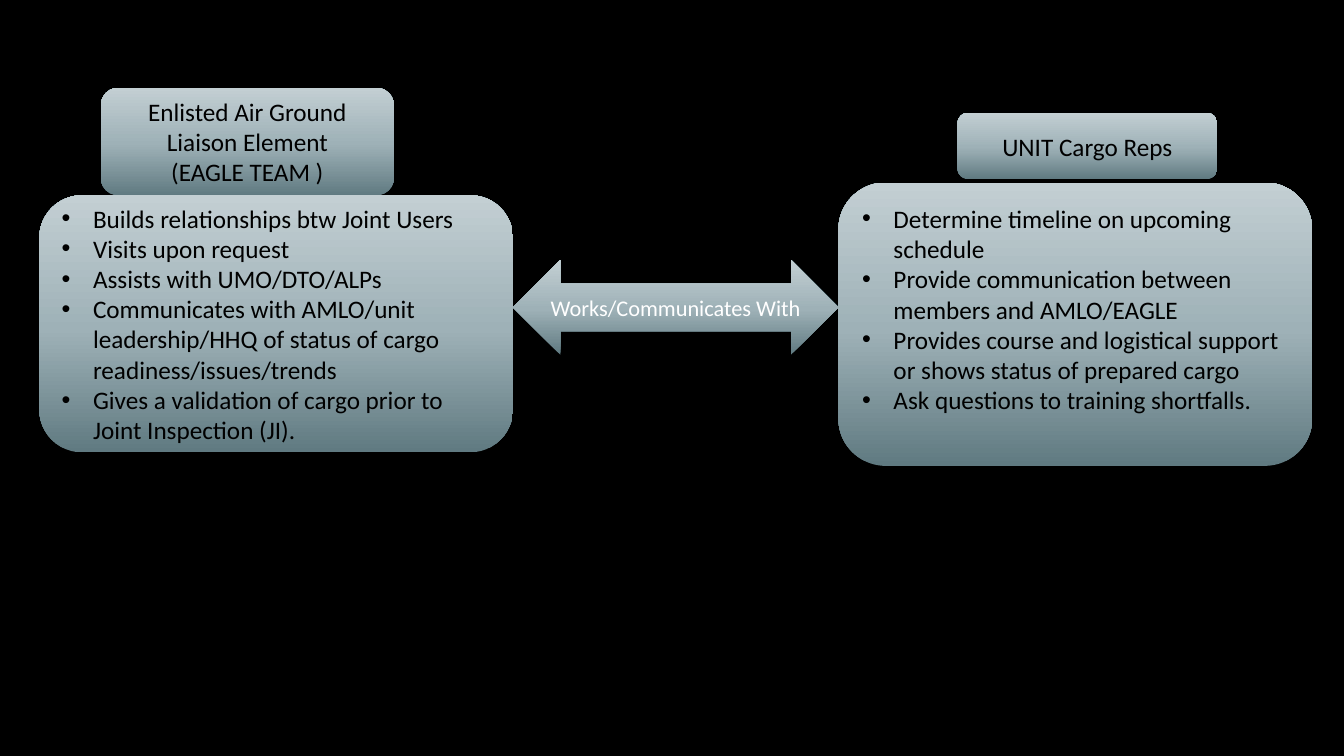
from copy import deepcopy

from lxml.etree import SubElement
from pptx import Presentation
from pptx.dml.color import RGBColor
from pptx.enum.shapes import MSO_SHAPE
from pptx.enum.text import MSO_ANCHOR, PP_ALIGN
from pptx.oxml.ns import qn
from pptx.util import Cm, Pt

GRADIENT = [(0, "607A81"), (0.48, "9EB1B7"), (1, "C3CFD3")]


def colour(value):
    return RGBColor.from_string(value)


def write(para, text, size=18, ink="000000", font="Calibri",
          align=PP_ALIGN.CENTER, bullet=False):
    if bullet:
        properties = para._p.get_or_add_pPr()
        properties.set("marL", str(Cm(0.79)))
        properties.set("indent", str(-Cm(0.79)))
        SubElement(properties, qn("a:buFont"), typeface="Arial")
        SubElement(properties, qn("a:buChar"), char="•")
    para.alignment = align
    span = para.add_run()
    span.text = text
    span.font.name = font
    span.font.size = Pt(size)
    span.font.color.rgb = colour(ink)


class Diagram:
    def __init__(self, deck, background="000000"):
        self.page = deck.slides.add_slide(deck.slide_layouts[6])
        self.page.background.fill.solid()
        self.page.background.fill.fore_color.rgb = colour(background)

    def block(self, place, lines, kind=MSO_SHAPE.ROUNDED_RECTANGLE, **style):
        """Add a gradient shape with one paragraph per line."""
        box = self.page.shapes.add_shape(kind, *map(Cm, place))
        box.shadow.inherit = False
        box.line.fill.background()
        self.shade(box)
        frame = box.text_frame
        frame.word_wrap = True
        frame.vertical_anchor = MSO_ANCHOR.MIDDLE
        for index, line in enumerate(lines):
            para = frame.add_paragraph() if index else frame.paragraphs[0]
            write(para, line, **style)
        return box

    def shade(self, box):
        box.fill.gradient()
        box.fill.gradient_angle = 90
        # The default gradient has two stops; add the middle one
        first = box._element.spPr.find(".//" + qn("a:gs"))
        first.addnext(deepcopy(first))
        for stop, (position, value) in zip(box.fill.gradient_stops, GRADIENT):
            stop.position = position
            stop.color.rgb = colour(value)

    def panel(self, place, lines):
        return self.block(place, lines, align=PP_ALIGN.LEFT, bullet=True)

    def arrow(self, place, label):
        return self.block(place, [label], MSO_SHAPE.LEFT_RIGHT_ARROW,
                          size=16, ink="FFFFFF")


def main():
    deck = Presentation()
    deck.slide_width, deck.slide_height = Cm(33.87), Cm(19.05)
    diagram = Diagram(deck)

    # Headings
    diagram.block((24.13, 2.84, 6.55, 1.68), ["UNIT Cargo Reps"])
    diagram.block((2.54, 2.21, 7.39, 2.72),
                  ["Enlisted Air Ground Liaison Element", "(EAGLE TEAM )"])

    # Link between the two teams
    diagram.arrow((12.93, 6.55, 8.2, 2.39), "Works/Communicates With")

    # Duties of each team
    diagram.panel((0.99, 4.92, 11.94, 6.48), [
        "Builds relationships btw Joint Users",
        "Visits upon request",
        "Assists with UMO/DTO/ALPs",
        "Communicates with AMLO/unit leadership/HHQ of status of cargo "
        "readiness/issues/trends",
        "Gives a validation of cargo prior to Joint Inspection (JI).",
    ])
    cargo_duties = diagram.panel((21.13, 4.6, 11.94, 7.14), [
        "Determine timeline on upcoming schedule",
        "Provide communication between members and AMLO/EAGLE",
        "Provides course and logistical support or shows status of "
        "prepared cargo",
        "Ask questions to training shortfalls.",
    ])
    # Room below the list lifts it above the middle
    cargo_duties.text_frame.margin_bottom = Cm(0.89)

    deck.save("out.pptx")


if __name__ == "__main__":
    main()
